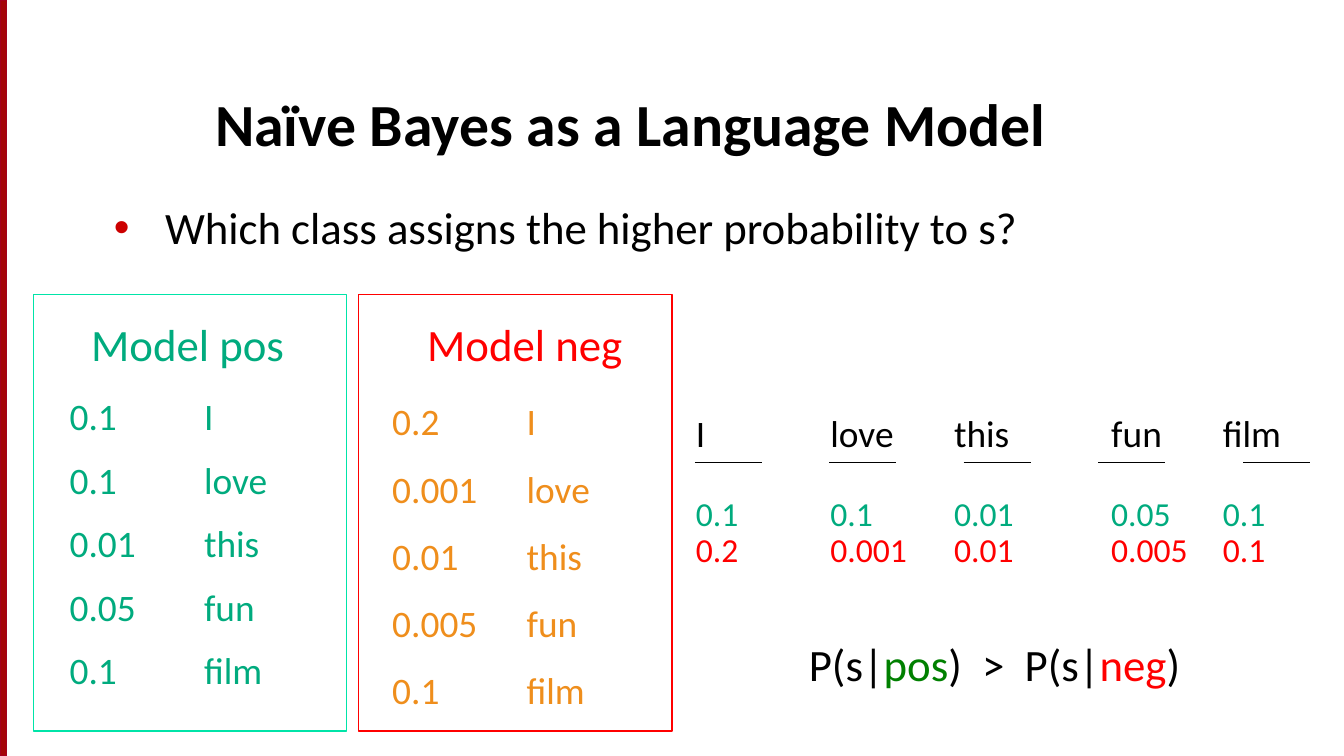
from dataclasses import dataclass

import pptx
import pptx.dml.color
import pptx.enum.shapes
import pptx.enum.text
import pptx.oxml
import pptx.oxml.ns
import pptx.util
from pptx.util import Inches


@dataclass(frozen=True)
class Theme:
    font: str = "Calibri"
    black: str = "000000"
    bar: str = "A40508"
    bar_edge: str = "A4001D"
    bullet: str = "CC0000"
    pos: str = "00AB7E"
    pos_frame: str = "00E4A8"
    neg: str = "FF0000"
    neg_list: str = "EF8E1C"
    pos_formula: str = "008000"
    title_size: int = 32
    heading_size: int = 24
    word_size: int = 20
    value_size: int = 18
    line_width: float = 0.75


@dataclass(frozen=True)
class Box:
    left: float
    top: float
    width: float
    height: float

    def lengths(self) -> tuple:
        return tuple(Inches(v) for v in (self.left, self.top, self.width, self.height))


@dataclass(frozen=True)
class Word:
    text: str
    pos: str
    neg: str
    left: float
    width: float
    rule_left: float


@dataclass(frozen=True)
class Model:
    name: str
    color: str
    frame_color: str
    frame_left: float
    heading_left: float


THEME = Theme()
SLIDE_WIDTH = 10
SLIDE_HEIGHT = SLIDE_WIDTH * 9 / 16
WORDS = [
    Word("I", "0.1", "0.2", 5.08, 1.08, 5.17),
    Word("love", "0.1", "0.001", 6.08, 1.08, 6.17),
    Word("this", "0.01", "0.01", 7, 1.08, 7.17),
    Word("fun", "0.05", "0.005", 8.17, 1, 8.17),
    Word("film", "0.1", "0.1", 9, 1.5, 9.25),
]
MODELS = [
    Model("Model pos", THEME.pos, THEME.pos_frame, 0.25, 0.58),
    Model("Model neg", THEME.neg, THEME.neg, 2.67, 3.08),
]
FORMULA = [
    ("P(s|", THEME.black),
    ("pos", THEME.pos_formula),
    (")  >  P(s|", THEME.black),
    ("neg", THEME.neg),
    (")", THEME.black),
]


def rgb(color: str) -> pptx.dml.color.RGBColor:
    return pptx.dml.color.RGBColor.from_string(color)


def style_run(run, size: int, color: str, bold: bool = False) -> None:
    run.font.name = THEME.font
    run.font.size = pptx.util.Pt(size)
    run.font.color.rgb = rgb(color)
    run.font.bold = bold


def add_text(slide, box: Box, text: str, size: int, color: str, wrap: bool = True):
    """Add a text box with one paragraph per line of text and tab stops every inch."""
    frame = slide.shapes.add_textbox(*box.lengths()).text_frame
    frame.word_wrap = wrap
    frame.text = text
    for paragraph in frame.paragraphs:
        paragraph._p.get_or_add_pPr().set("defTabSz", str(Inches(1)))
        for run in paragraph.runs:
            style_run(run, size, color)
    return frame


def add_rectangle(slide, box: Box, line: str, fill: str | None = None) -> None:
    rectangle = slide.shapes.add_shape(
        pptx.enum.shapes.MSO_SHAPE.RECTANGLE, *box.lengths()
    )
    rectangle.shadow.inherit = False
    if fill:
        rectangle.fill.solid()
        rectangle.fill.fore_color.rgb = rgb(fill)
    else:
        rectangle.fill.background()
    rectangle.line.color.rgb = rgb(line)
    rectangle.line.width = pptx.util.Pt(THEME.line_width)


def add_rule(slide, left: float, top: float, width: float) -> None:
    rule = slide.shapes.add_connector(
        pptx.enum.shapes.MSO_CONNECTOR.STRAIGHT,
        Inches(left), Inches(top), Inches(left + width), Inches(top),
    )
    rule.line.color.rgb = rgb(THEME.black)
    rule.line.width = pptx.util.Pt(THEME.line_width)
    rule._element.spPr.append(pptx.oxml.parse_xml(
        f"<a:effectLst {pptx.oxml.ns.nsdecls('a')}/>"
    ))


def add_title(slide, text: str) -> None:
    title = slide.shapes.title
    title.left, title.top, title.width, title.height = Box(1.5, 0.42, 8.17, 0.81).lengths()
    frame = title.text_frame
    frame.text = text
    frame.auto_size = pptx.enum.text.MSO_AUTO_SIZE.NONE
    frame.vertical_anchor = pptx.enum.text.MSO_ANCHOR.BOTTOM
    frame.paragraphs[0].alignment = pptx.enum.text.PP_ALIGN.LEFT
    style_run(frame.paragraphs[0].runs[0], THEME.title_size, THEME.black, bold=True)


def add_question(slide, text: str) -> None:
    frame = add_text(slide, Box(0.75, 1.44, 8.5, 0.89), text, THEME.heading_size, THEME.black)
    properties = frame.paragraphs[0]._p.get_or_add_pPr()
    properties.set("marL", str(Inches(0.38)))
    properties.set("indent", str(Inches(-0.38)))
    namespace = pptx.oxml.ns.nsdecls("a")
    for bullet_part in (
        f'<a:buClr {namespace}><a:srgbClr val="{THEME.bullet}"/></a:buClr>',
        f'<a:buFont {namespace} typeface="Arial"/>',
        f'<a:buChar {namespace} char="•"/>',
    ):
        properties.append(pptx.oxml.parse_xml(bullet_part))


def add_models(slide) -> None:
    pos_rows = "\n".join(f"{word.pos}\t{word.text}" for word in WORDS)
    pos_list = add_text(slide, Box(0.42, 2.88, 2.67, 2.46), pos_rows, THEME.word_size, THEME.pos)
    for paragraph in pos_list.paragraphs[1:]:
        paragraph.space_before = pptx.util.Pt(THEME.word_size / 2)

    for model in MODELS:
        add_text(slide, Box(model.heading_left, 2.31, 1.75, 0.5), model.name,
                 THEME.heading_size, model.color)
        add_rectangle(slide, Box(model.frame_left, 2.19, 2.33, 3.25), model.frame_color)

    neg_rows = "\n".join(f"{word.neg}\t{word.text}" for word in WORDS)
    neg_list = add_text(slide, Box(2.82, 2.75, 1.69, 2.6), neg_rows, THEME.word_size,
                        THEME.neg_list, wrap=False)
    for paragraph in neg_list.paragraphs:
        paragraph.line_spacing = 1.5


def add_sentence(slide) -> None:
    """Show each word of the sentence above its probability in both models."""
    for word in WORDS:
        for text, top, height, size, color in (
            (word.text, 3, 0.44, THEME.word_size, THEME.black),
            (word.pos, 3.62, 0.4, THEME.value_size, THEME.pos),
            (word.neg, 3.89, 0.4, THEME.value_size, THEME.neg),
        ):
            add_text(slide, Box(word.left, top, word.width, height), text, size, color)
        add_rule(slide, word.rule_left, 3.44, 0.5)


def add_formula(slide) -> None:
    frame = add_text(slide, Box(5.92, 4.69, 3.17, 0.5), "", THEME.heading_size, THEME.black)
    for text, color in FORMULA:
        run = frame.paragraphs[0].add_run()
        run.text = text
        style_run(run, THEME.heading_size, color)


def main() -> None:
    presentation = pptx.Presentation()
    presentation.slide_width = Inches(SLIDE_WIDTH)
    presentation.slide_height = Inches(SLIDE_HEIGHT)
    slide = presentation.slides.add_slide(presentation.slide_layouts.get_by_name("Title Only"))
    add_rectangle(slide, Box(0, 0, 0.05, SLIDE_HEIGHT), THEME.bar_edge, THEME.bar)
    add_title(slide, "Naïve Bayes as a Language Model")
    add_question(slide, "Which class assigns the higher probability to s?")
    add_models(slide)
    add_sentence(slide)
    add_formula(slide)
    presentation.save("out.pptx")


if __name__ == "__main__":
    main()
